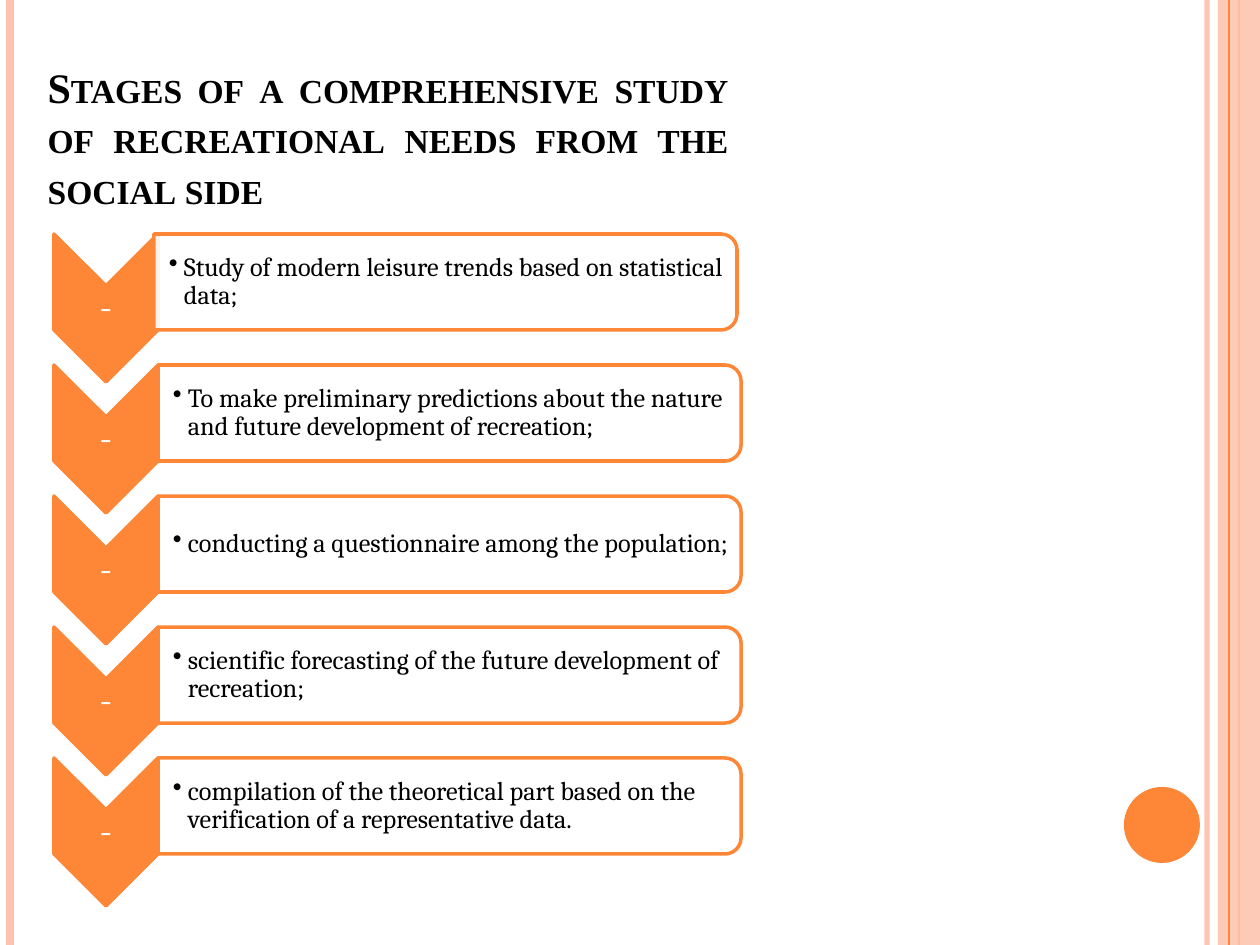
import pptx
import pptx.util
import pptx.dml.color
import pptx.enum.shapes
import pptx.enum.text
import pptx.oxml.ns
import lxml.etree

PX_PER_INCH = 126
ORANGE = "FE8637"
PEACH = "FEC3AE"
WHITE = "FFFFFF"
BLACK = "000000"
SHAPE = pptx.enum.shapes.MSO_SHAPE
ALIGN = pptx.enum.text.PP_ALIGN
ANCHOR = pptx.enum.text.MSO_ANCHOR

TITLE = "Stages of a comprehensive study of recreational needs from the social side"
STAGES = [
    "Study of modern leisure trends based on statistical data;",
    "To make preliminary predictions about the nature and future development of recreation;",
    "conducting a questionnaire among the population;",
    "scientific forecasting of the future development of recreation;",
    "compilation of the theoretical part based on the verification of a representative data.",
]


def px(length):
    return pptx.util.Emu(round(length * 914400 / PX_PER_INCH))


def color(value):
    return pptx.dml.color.RGBColor.from_string(value)


def apply(target, values):
    for name, value in values.items():
        setattr(target, name, value)


def add_child(parent, tag, **attributes):
    child = lxml.etree.SubElement(parent, pptx.oxml.ns.qn(tag))
    for name, value in attributes.items():
        child.set(name, value)
    return child


def set_alpha(parent, percent):
    for fill in parent.iter(pptx.oxml.ns.qn("a:srgbClr")):
        add_child(fill, "a:alpha", val=str(percent * 1000))


def add_figure(page, kind, box, fill, line=None, alpha=None, rotation=0):
    left, top, width, height = box
    if rotation:
        left, top = left + (width - height) / 2, top + (height - width) / 2
        width, height = height, width
    figure = page.shapes.add_shape(kind, px(left), px(top), px(width), px(height))
    figure.rotation = rotation
    figure.shadow.inherit = False
    figure.fill.solid()
    figure.fill.fore_color.rgb = color(fill)
    if alpha:
        set_alpha(figure.fill._xPr, alpha)
    if line:
        figure.line.color.rgb = color(line)
        figure.line.width = pptx.util.Pt(2)
    else:
        figure.line.fill.background()
    return figure


def add_stripe(page, x, height, shade, width, alpha=None):
    stripe = page.shapes.add_connector(
        pptx.enum.shapes.MSO_CONNECTOR.STRAIGHT, px(x), px(0), px(x), px(height))
    stripe.line.color.rgb = color(shade)
    stripe.line.width = pptx.util.Pt(width)
    properties = stripe._element.spPr
    if alpha:
        set_alpha(properties, alpha)
    add_child(properties, "a:effectLst")


def write(frame, text, frame_format, para_format, font_format, shade):
    apply(frame, {"word_wrap": True, **frame_format})
    para = frame.paragraphs[0]
    apply(para, para_format)
    span = para.add_run()
    span.text = text
    apply(span.font, font_format)
    span.font.color.rgb = color(shade)
    return para, span


def add_label(page, box, text, insets, para_format, size, shade):
    label = page.shapes.add_textbox(*map(px, box))
    sides = ("margin_left", "margin_top", "margin_right", "margin_bottom")
    frame_format = {"vertical_anchor": ANCHOR.MIDDLE, **dict(zip(sides, map(px, insets)))}
    font_format = {"name": "Cambria", "size": pptx.util.Pt(size)}
    return write(label.text_frame, text, frame_format,
                 {"line_spacing": 0.9, **para_format}, font_format, shade)


def draw_frame(page, box):
    left, top, width, height = box
    right = left + width
    add_stripe(page, right - 53, height, PEACH, 3, 93)
    add_stripe(page, left + 10, height, PEACH, 4.5)
    add_stripe(page, right - 21, height, ORANGE, 1.5)
    add_figure(page, SHAPE.RECTANGLE, (right - 42, top, 42, height), PEACH, alpha=87)
    add_stripe(page, right - 31, height, ORANGE, 0.75)
    add_figure(page, SHAPE.OVAL, (right - 136, top + 787, 76, 76), ORANGE)


def draw_title(page, box):
    title = page.shapes.title
    apply(title, dict(zip(("left", "top", "width", "height"), map(px, box))))
    para, span = write(
        title.text_frame, TITLE,
        {"vertical_anchor": ANCHOR.BOTTOM, "auto_size": pptx.enum.text.MSO_AUTO_SIZE.NONE},
        {"alignment": ALIGN.JUSTIFY},
        {"name": "Times New Roman", "size": pptx.util.Pt(24), "bold": True}, BLACK)
    span.font._element.set("cap", "small")


def draw_stage(page, box, text, panel_shift):
    left, top, width, height = box
    chevron_width = 104
    panel_left = left + chevron_width - 4 + panel_shift
    panel_width = width - chevron_width
    panel_height = 96
    add_figure(page, SHAPE.CHEVRON, (left, top, chevron_width, height),
               ORANGE, ORANGE, rotation=90)
    add_label(page, (left, top + 52, chevron_width, 44), "-", (2, 2, 2, 2),
              {"alignment": ALIGN.CENTER}, 22, WHITE)
    add_figure(page, SHAPE.ROUND_2_SAME_RECTANGLE,
               (panel_left, top, panel_width, panel_height), WHITE, ORANGE, 90, 90)
    para, span = add_label(page, (panel_left, top + 4, panel_width - 5, panel_height - 8),
                           text, (15, 1, 1, 1), {"level": 1}, 15, BLACK)
    properties = para._p.get_or_add_pPr()
    properties.set("marL", str(px(15)))
    properties.set("indent", str(px(-15)))
    add_child(properties, "a:buChar", char="•")


def draw_stages(page, box):
    left, top, width, height = box
    stage_height = 148
    step = (height - stage_height) / (len(STAGES) - 1)
    for index, text in enumerate(STAGES):
        draw_stage(page, (left, top + index * step, width, stage_height),
                   text, 4 if index else 0)


def main():
    deck = pptx.Presentation()
    apply(deck, {"slide_width": px(1260), "slide_height": px(945)})
    page = deck.slides.add_slide(deck.slide_layouts[5])
    draw_frame(page, (0, 0, 1260, 945))
    draw_title(page, (35, 16, 706, 203))
    draw_stages(page, (54, 234, 687, 672))
    deck.save("out.pptx")


if __name__ == "__main__":
    main()
